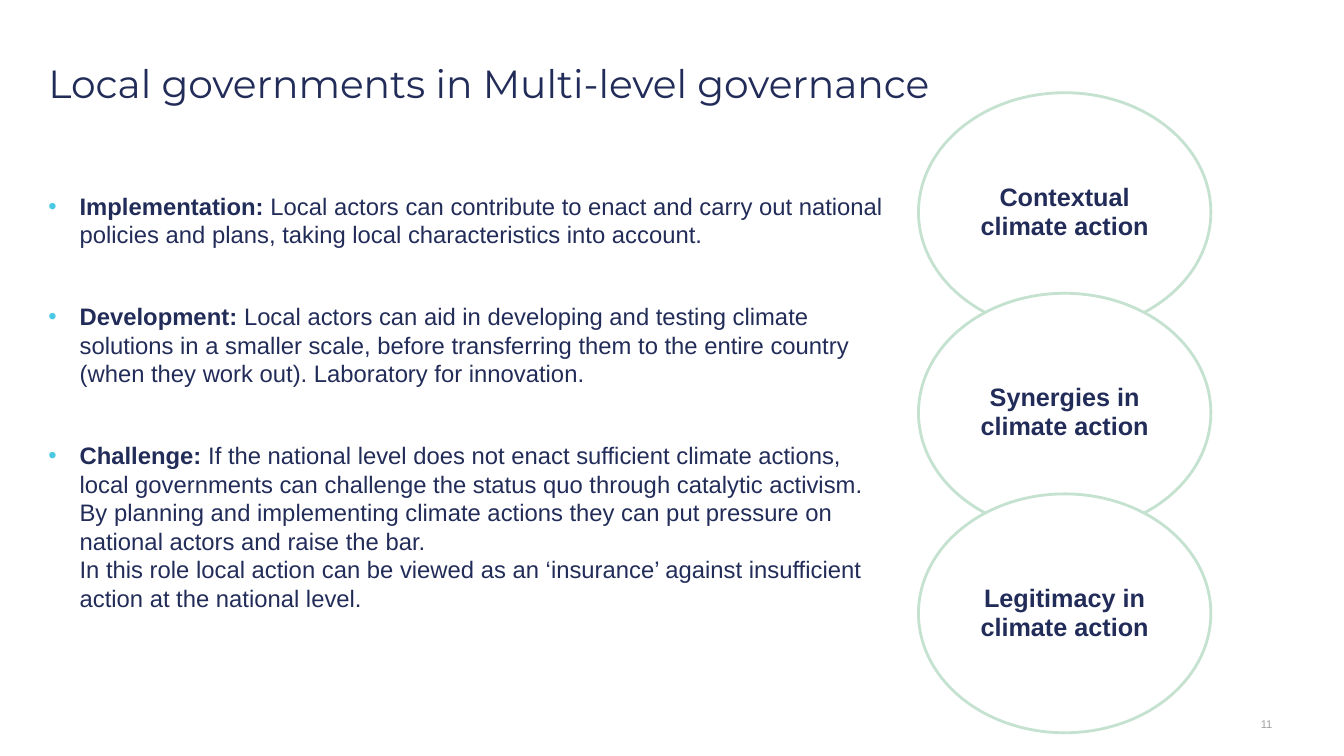
from dataclasses import dataclass

from lxml.etree import SubElement
from pptx import Presentation
from pptx.dml.color import RGBColor
from pptx.enum.shapes import MSO_SHAPE
from pptx.enum.text import MSO_ANCHOR as Anchor, PP_ALIGN as Align
from pptx.oxml.ns import qn
from pptx.util import Inches, Pt


@dataclass(frozen=True)
class Theme:
    navy: RGBColor = RGBColor(0x22, 0x2C, 0x59)
    mint: RGBColor = RGBColor(0xC5, 0xE2, 0xD0)
    white: RGBColor = RGBColor(0xFF, 0xFF, 0xFF)
    grey: RGBColor = RGBColor(0xA0, 0xA0, 0xA0)
    bullet: str = "49C9E3"
    title_font: str = "Montserrat"
    body_font: str = "Arial"
    title_size: int = 28
    body_size: int = 17
    circle_size: int = 18
    number_size: int = 8


THEME = Theme()

ROLES = [
    ("Implementation:",
     " Local actors can contribute to enact and carry out national policies "
     "and plans, taking local characteristics into account."),
    ("Development:",
     " Local actors can aid in developing and testing climate solutions in a "
     "smaller scale, before transferring them to the entire country (when "
     "they work out). Laboratory for innovation."),
    ("Challenge:",
     " If the national level does not enact sufficient climate actions, local "
     "governments can challenge the status quo through catalytic activism. By "
     "planning and implementing climate actions they can put pressure on "
     "national actors and raise the bar.\n"
     "In this role local action can be viewed as an ‘insurance’ against "
     "insufficient action at the national level."),
]

OUTCOMES = [
    "Contextual climate action",
    "Synergies in climate action",
    "Legitimacy in climate action",
]


def write(paragraph, text, *, size, font=THEME.body_font, color=THEME.navy,
          bold=False, align=None, line_spacing=None):
    """Append text to the paragraph; a newline becomes a line break."""
    if align is not None:
        paragraph.alignment = align
    if line_spacing is not None:
        paragraph.line_spacing = line_spacing
    for index, line in enumerate(text.split("\n")):
        if index:
            paragraph.add_line_break()
        run = paragraph.add_run()
        run.text = line
        run.font.name = font
        run.font.size = Pt(size)
        run.font.bold = bold
        run.font.color.rgb = color


def add_text_frame(slide, left, top, width, height, anchor=Anchor.TOP):
    box = slide.shapes.add_textbox(Inches(left), Inches(top),
                                   Inches(width), Inches(height))
    frame = box.text_frame
    frame.word_wrap = True
    frame.vertical_anchor = anchor
    frame.margin_left = frame.margin_right = 0
    frame.margin_top = frame.margin_bottom = 0
    return frame


def set_bullet(paragraph, indent):
    properties = paragraph._p.get_or_add_pPr()
    properties.set("marL", str(Inches(indent)))
    properties.set("indent", str(-Inches(indent)))
    color = SubElement(properties, qn("a:buClr"))
    SubElement(color, qn("a:srgbClr"), val=THEME.bullet)
    SubElement(properties, qn("a:buFont"), typeface=THEME.body_font)
    SubElement(properties, qn("a:buChar"), char="•")


def add_roles(slide):
    frame = add_text_frame(slide, 0.48, 1.9, 8.32, 4.39)
    for index, (role, explanation) in enumerate(ROLES):
        paragraph = frame.add_paragraph() if index else frame.paragraphs[0]
        set_bullet(paragraph, 0.31)
        if index:
            paragraph.space_before = Pt(38)
        write(paragraph, role, size=THEME.body_size, bold=True)
        write(paragraph, explanation, size=THEME.body_size)


def add_outcome_circle(slide, outcome, top):
    circle = slide.shapes.add_shape(MSO_SHAPE.OVAL, Inches(9.11), Inches(top),
                                    Inches(2.9), Inches(2.37))
    circle.shadow.inherit = False
    circle.fill.solid()
    circle.fill.fore_color.rgb = THEME.white
    circle.line.color.rgb = THEME.mint
    circle.line.width = Pt(2)
    frame = circle.text_frame
    frame.word_wrap = True
    frame.vertical_anchor = Anchor.MIDDLE
    write(frame.paragraphs[0], outcome, size=THEME.circle_size, bold=True,
          align=Align.CENTER, line_spacing=0.95)


def main():
    deck = Presentation()
    deck.slide_width, deck.slide_height = Inches(13.33), Inches(7.5)
    slide = deck.slides.add_slide(deck.slide_layouts[6])

    add_roles(slide)
    title = add_text_frame(slide, 0.48, 0.64, 9.17, 0.98)
    write(title.paragraphs[0], "Local governments in Multi-level governance",
          size=THEME.title_size, font=THEME.title_font, line_spacing=0.9)
    page_number = add_text_frame(slide, 12.34, 6.98, 0.28, 0.4, Anchor.MIDDLE)
    write(page_number.paragraphs[0], "11", size=THEME.number_size,
          color=THEME.grey, align=Align.RIGHT)
    for index, outcome in enumerate(OUTCOMES):
        add_outcome_circle(slide, outcome, top=0.92 + 1.99 * index)

    deck.save("out.pptx")


if __name__ == "__main__":
    main()
